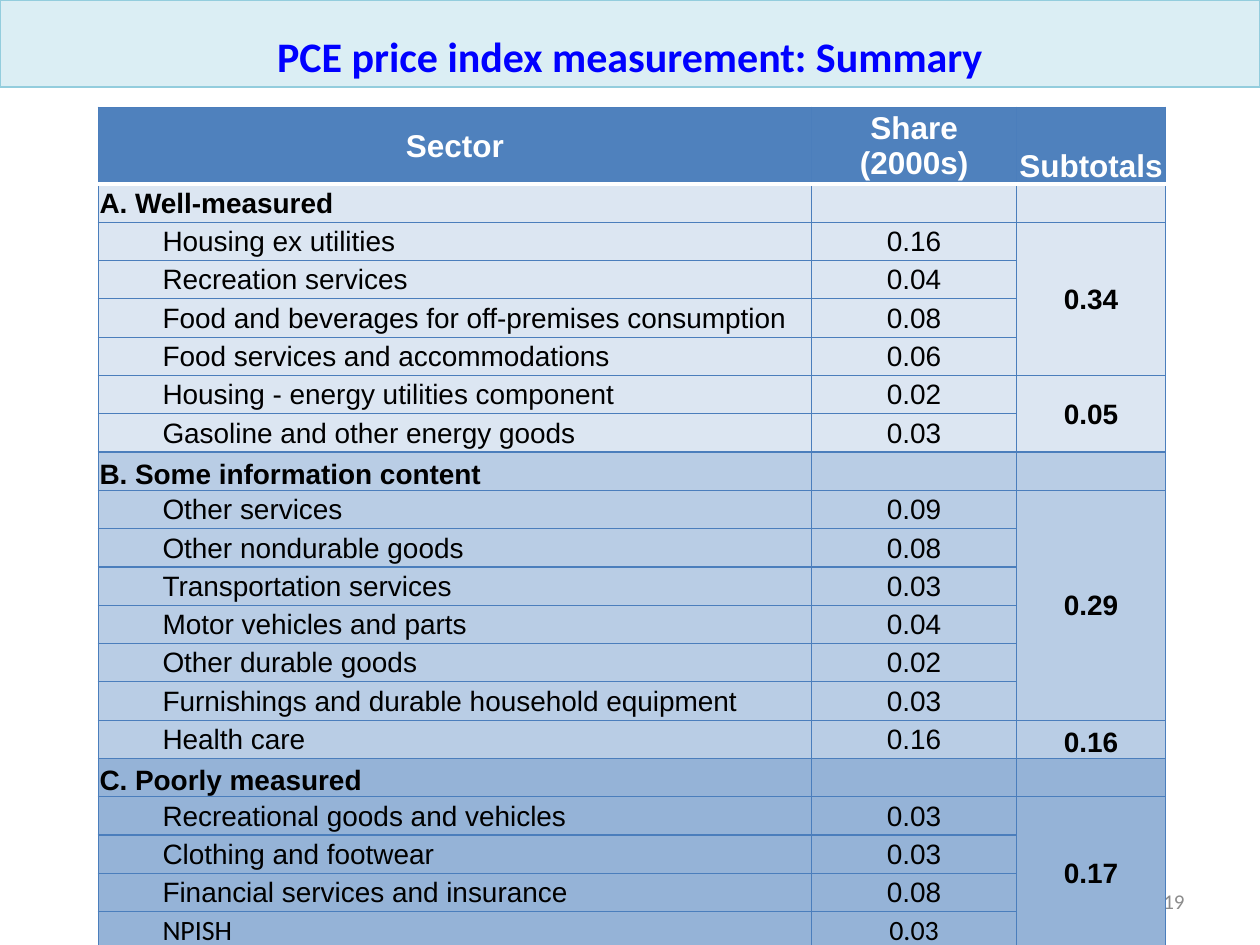
from lxml import etree
from pptx import Presentation
from pptx.dml.color import RGBColor
from pptx.enum.shapes import MSO_SHAPE
from pptx.enum.text import MSO_ANCHOR, PP_ALIGN
from pptx.oxml.ns import qn
from pptx.util import Inches, Pt

LEFT, CENTER, RIGHT = PP_ALIGN.LEFT, PP_ALIGN.CENTER, PP_ALIGN.RIGHT
MIDDLE, BOTTOM = MSO_ANCHOR.MIDDLE, MSO_ANCHOR.BOTTOM
RECT = MSO_SHAPE.RECTANGLE

HEADS = [("Sector", MIDDLE), ("Share (2000s)", MIDDLE), ("Subtotals", BOTTOM)]
WIDTHS = [5.66, 1.63, 1.18]
HEAD_H, TABLE_H = 0.33, 6.41
# Each group: title, anchor, fill, blocks of (subtotal, anchor, sectors)
GROUPS = [
    ("A. Well-measured", MIDDLE, "DCE6F2", [
        ("0.34", MIDDLE, [
            ("Housing ex utilities", "0.16"),
            ("Recreation services", "0.04"),
            ("Food and beverages for off-premises consumption", "0.08"),
            ("Food services and accommodations", "0.06")]),
        ("0.05", MIDDLE, [
            ("Housing - energy utilities component", "0.02"),
            ("Gasoline and other energy goods", "0.03")])]),
    ("B. Some information content", BOTTOM, "B9CDE5", [
        ("0.29", MIDDLE, [
            ("Other services", "0.09"),
            ("Other nondurable goods", "0.08"),
            ("Transportation services", "0.03"),
            ("Motor vehicles and parts", "0.04"),
            ("Other durable goods", "0.02"),
            ("Furnishings and durable household equipment", "0.03")]),
        ("0.16", BOTTOM, [("Health care", "0.16")])]),
    ("C. Poorly measured", BOTTOM, "95B3D7", [
        ("0.17", MIDDLE, [
            ("Recreational goods and vehicles", "0.03"),
            ("Clothing and footwear", "0.03"),
            ("Financial services and insurance", "0.08"),
            ("NPISH", "0.03")])]),
]


def rgb(code):
    return RGBColor.from_string(code)


class Deck:
    font, head, edge = "Arial", "4F81BD", "4B7EBC"

    def __init__(self, slide):
        self.slide = slide

    def text(self, frame, words, size, color, align, font=None, bold=False):
        frame.text = words
        para = frame.paragraphs[0]
        para.alignment = align
        for run in para.runs:
            run.font.size, run.font.bold = Pt(size), bold
            run.font.name = font or self.font
            run.font.color.rgb = rgb(color)
        return para

    def number(self, words):
        box = self.slide.shapes.add_textbox(
            Inches(7.17), Inches(6.95), Inches(2.33), Inches(0.4))
        frame = box.text_frame
        frame.word_wrap, frame.vertical_anchor = True, MIDDLE
        self.text(frame, words, 12, "8C8C8C", RIGHT, "Calibri")

    def banner(self, words):
        bar = self.slide.shapes.add_shape(RECT, 0, 0, Inches(10), Inches(0.69))
        bar.shadow.inherit = False
        bar.fill.solid()
        bar.fill.fore_color.rgb = rgb("DBEEF4")
        bar.line.color.rgb = rgb("93CDDD")
        bar.line.width = 0
        bar.text_frame.vertical_anchor = BOTTOM
        self.text(bar.text_frame, words, 24, "0000FF", CENTER, "Calibri", True)

    def border(self, cell, side, color, width):
        line = etree.SubElement(cell._tc.get_or_add_tcPr(), qn("a:ln" + side),
                                w=str(Pt(width)))
        fill = etree.SubElement(line, qn("a:solidFill"))
        etree.SubElement(fill, qn("a:srgbClr"), val=color)

    def cell(self, cell, fill, row):
        """Give a cell its insets, borders, fill and empty-text size."""
        cell.margin_left = cell.margin_right = cell.margin_top = Inches(0.01)
        cell.margin_bottom = 0
        white = {0: "B", 1: "T"}.get(row)
        for side in "LRTB":
            look = ("FFFFFF", 2) if side == white else (self.edge, 0.75)
            self.border(cell, side, *look)
        cell.fill.solid()
        cell.fill.fore_color.rgb = rgb(fill)
        end = cell.text_frame.paragraphs[0]._p.get_or_add_endParaRPr()
        end.set("sz", "1600")

    def label(self, cell, words, anchor=MIDDLE, size=16, color="000000",
              align=CENTER, **look):
        cell.vertical_anchor = anchor
        return self.text(cell.text_frame, words, size, color, align, **look)

    def sector(self, grid, row, name, share):
        font = "Calibri" if name == "NPISH" else self.font
        para = self.label(grid.cell(row, 0), name, align=LEFT, font=font)
        para.level = 1
        props = para._p.get_or_add_pPr()
        props.set("marL", str(Inches(0.5)))
        props.set("indent", "0")
        self.label(grid.cell(row, 1), share, font=font)

    def table(self, groups):
        fills = [self.head]
        for _, _, fill, blocks in groups:
            fills += [fill] * (1 + sum(len(block[2]) for block in blocks))
        count = len(fills)
        step = (TABLE_H - HEAD_H) / (count - 1)
        grid = self.slide.shapes.add_table(
            count, len(WIDTHS), Inches(0.78), Inches(0.85),
            Inches(sum(WIDTHS)), Inches(TABLE_H)).table
        for col, width in zip(grid.columns, WIDTHS):
            col.width = Inches(width)
        for i, fill in enumerate(fills):
            grid.rows[i].height = Inches(step if i else HEAD_H)
            for cell in grid.rows[i].cells:
                self.cell(cell, fill, i)
        for i, (words, anchor) in enumerate(HEADS):
            self.label(grid.cell(0, i), words, anchor, 18, "FFFFFF", bold=True)
        row = 1
        for title, anchor, _, blocks in groups:
            self.label(grid.cell(row, 0), title, anchor, align=LEFT, bold=True)
            row += 1
            for total, place, sectors in blocks:
                top = grid.cell(row, 2)
                if len(sectors) > 1:
                    top.merge(grid.cell(row + len(sectors) - 1, 2))
                self.label(top, total, place, bold=True)
                for name, share in sectors:
                    self.sector(grid, row, name, share)
                    row += 1


def main():
    prs = Presentation()
    prs.slide_width, prs.slide_height = Inches(10), Inches(7.5)
    deck = Deck(prs.slides.add_slide(prs.slide_layouts[6]))
    deck.number("19")
    deck.banner("PCE price index measurement: Summary")
    deck.table(GROUPS)
    prs.save("out.pptx")


if __name__ == "__main__":
    main()
